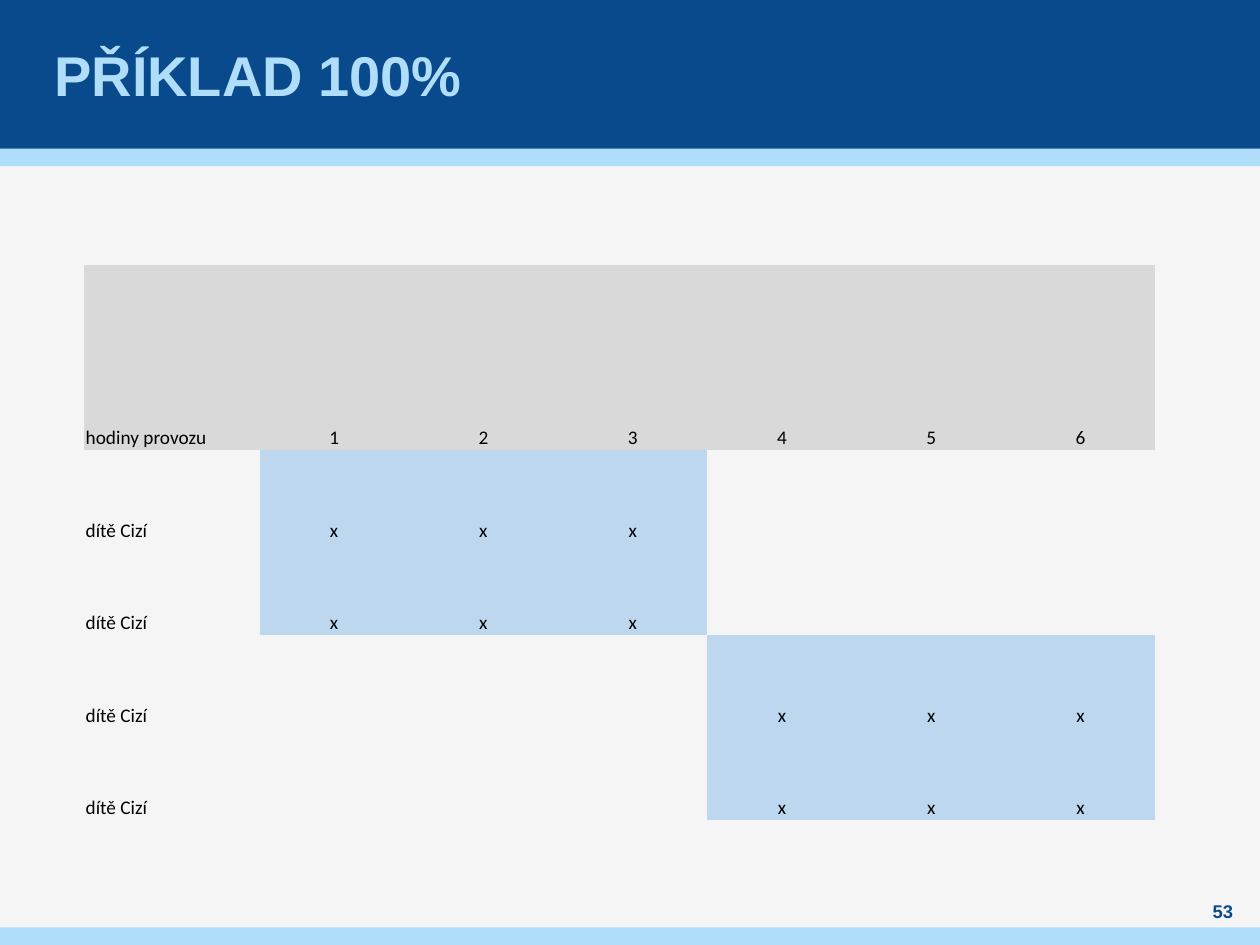
from pptx import Presentation, util as u
from pptx.dml.color import RGBColor
from pptx.enum import shapes, text
from pptx.oxml import ns

COLUMNS, ROWS = 100, 75
UNIT = u.Inches(10) // COLUMNS
NAVY, SKY, PAPER = "084A8B", "AFDDFA", "F5F5F5"
GREY, BLUE, BLACK = "D9D9D9", "BDD7EE", "000000"
PLAIN_TABLE_STYLE = "{2D5ABB26-0587-4C30-8999-92F81FD0307C}"
HOURS = 6
SHIFTS = [range(1, 4), range(1, 4), range(4, 7), range(4, 7)]


def grid(*lengths):
    return [round(length * UNIT) for length in lengths]


def paint(fill, color):
    fill.solid()
    fill.fore_color.rgb = RGBColor.from_string(color)


def apply_format(target, values):
    for name, value in values.items():
        setattr(target, name, value)


def write(frame, words, font, color, align=text.PP_ALIGN.LEFT):
    paragraph = frame.paragraphs[0]
    paragraph.alignment = align
    run = paragraph.add_run()
    run.text = words
    apply_format(run.font, font)
    run.font.color.rgb = RGBColor.from_string(color)


def add_band(slide, box, color):
    shape = slide.shapes.add_shape(shapes.MSO_SHAPE.RECTANGLE, *grid(*box))
    shape.shadow.inherit = False
    shape.line.fill.background()
    paint(shape.fill, color)


def add_label(slide, box, words, size, color, align, inset):
    frame = slide.shapes.add_textbox(*grid(*box)).text_frame
    side = round(inset * UNIT)
    apply_format(frame, {
        "word_wrap": True, "vertical_anchor": text.MSO_ANCHOR.MIDDLE,
        "margin_left": side, "margin_right": side,
        "margin_top": 0, "margin_bottom": 0,
    })
    font = {"name": "Arial", "size": u.Pt(size), "bold": True}
    write(frame, words, font, color, align)


def add_header(slide, box, title):
    left, top, width, height = box
    stripe = 1.4
    add_band(slide, (left, top + height - stripe, width, stripe), SKY)
    add_band(slide, (left, top, width, height - stripe), NAVY)
    add_label(slide, (left + 3.9, top, width - 7.9, height - stripe),
              title, 32, SKY, text.PP_ALIGN.LEFT, 0.4)


def add_footer(slide, box, number):
    left, top, width, height = box
    add_band(slide, box, SKY)
    add_label(slide, (left + width - 5.5, top - 2.3, 5.1, 2),
              number, 10.5, NAVY, text.PP_ALIGN.CENTER, 0)


def fill_cell(cell, words, color, align):
    apply_format(cell, {
        "vertical_anchor": text.MSO_ANCHOR.BOTTOM,
        "margin_left": u.Inches(0.01), "margin_right": u.Inches(0.01),
        "margin_top": u.Inches(0.01), "margin_bottom": 0,
    })
    if color:
        paint(cell.fill, color)
    else:
        cell.fill.background()
    if words:
        font = {"name": "Calibri", "size": u.Pt(11), "bold": False}
        write(cell.text_frame, words, font, BLACK, align)


def add_schedule(slide, box):
    width, height = box[2:]
    frame = slide.shapes.add_table(len(SHIFTS) + 1, HOURS + 1, *grid(*box))
    table = frame.table
    apply_format(table, {"first_row": False, "horz_banding": False})
    next(frame.element.iter(ns.qn("a:tableStyleId"))).text = PLAIN_TABLE_STYLE

    label_width = 13.9
    hour_width = (width - label_width) / HOURS
    row_height = height / (len(SHIFTS) + 2)
    for index, column in enumerate(table.columns):
        column.width = grid(hour_width if index else label_width)[0]
    for index, row in enumerate(table.rows):
        row.height = grid(row_height if index else 2 * row_height)[0]

    hours = range(1, HOURS + 1)
    lines = [[("hodiny provozu", GREY)] + [(str(hour), GREY) for hour in hours]]
    for shift in SHIFTS:
        marks = [("x", BLUE) if hour in shift else ("", None) for hour in hours]
        lines.append([("dítě Cizí", None)] + marks)
    for row, line in enumerate(lines):
        for column, (words, color) in enumerate(line):
            align = text.PP_ALIGN.CENTER if column else text.PP_ALIGN.LEFT
            fill_cell(table.cell(row, column), words, color, align)


def main():
    presentation = Presentation()
    apply_format(presentation, {
        "slide_width": COLUMNS * UNIT, "slide_height": ROWS * UNIT,
    })
    slide = presentation.slides.add_slide(presentation.slide_layouts[6])
    paint(slide.background.fill, PAPER)
    add_header(slide, (0, 0, COLUMNS, 13.2), "PŘÍKLAD 100%")
    add_footer(slide, (0, ROWS - 1.4, COLUMNS, 1.4), "53")
    add_schedule(slide, (6.7, 21, 85, 44.1))
    presentation.save("out.pptx")


if __name__ == "__main__":
    main()
